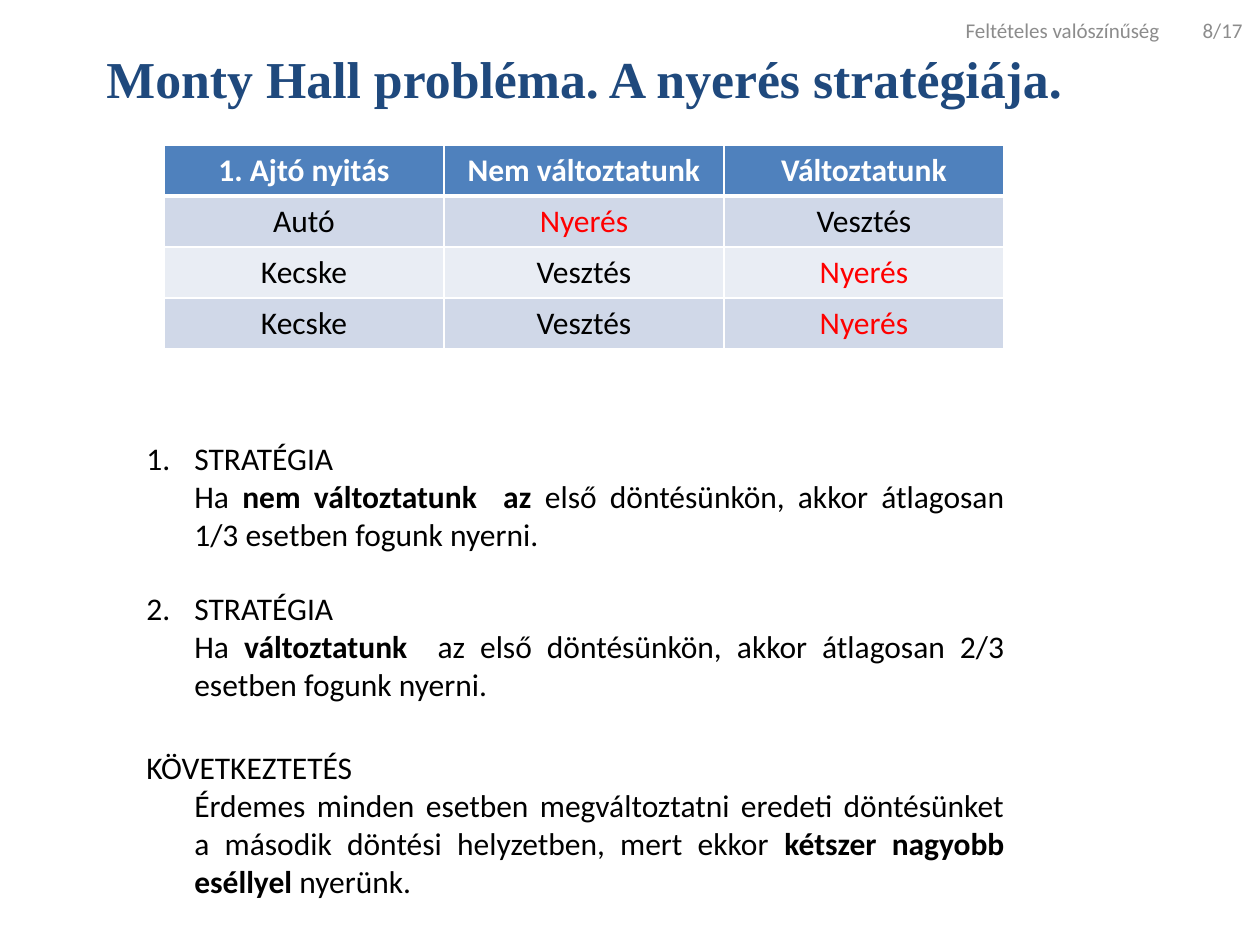
"""Builds the Monty Hall strategy slide with its table of outcomes."""
from dataclasses import dataclass

from lxml.etree import SubElement as Sub
from pptx import Presentation
from pptx.dml.color import RGBColor as Rgb
from pptx.enum.text import MSO_ANCHOR as Anchor, MSO_AUTO_SIZE as Auto, PP_ALIGN as Align
from pptx.oxml.ns import qn
from pptx.util import Emu, Pt

SCALE = 914400 / 126
INDENT = 48
COLORS = {
    "white": "FFFFFF", "black": "000000", "navy": "1F497D", "gray": "8C8C8C",
    "red": "FF0000", "head": "4F81BD", "odd": "D0D8E8", "even": "E9EDF4",
}


@dataclass
class Note:
    """A headed block; every second part of the body is bold."""
    top: int
    high: int
    head: str
    body: tuple[str, ...]
    num: int = 0


ROWS = (
    ("1. Ajtó nyitás", "Nem változtatunk", "Változtatunk"),
    ("Autó", "Nyerés", "Vesztés"),
    ("Kecske", "Vesztés", "Nyerés"),
    ("Kecske", "Vesztés", "Nyerés"),
)
NOTES = (
    Note(433, 127, "STRATÉGIA",
         ("Ha ", "nem változtatunk  az ",
          "első döntésünkön, akkor átlagosan 1/3 esetben fogunk nyerni."), 1),
    Note(583, 127, "STRATÉGIA",
         ("Ha ", "változtatunk",
          "  az első döntésünkön, akkor átlagosan 2/3 esetben fogunk nyerni."), 2),
    Note(742, 165, "KÖVETKEZTETÉS",
         ("Érdemes minden esetben megváltoztatni eredeti döntésünket "
          "a második döntési helyzetben, mert ekkor ",
          "kétszer nagyobb eséllyel", " nyerünk.")),
)


def px(n: int) -> Emu:
    """Turn pixels into EMU."""
    return Emu(round(n * SCALE))


def write(para, text: str, size: float = 18, font: str = "Calibri",
          color: str = "black", bold: bool = False, align=None) -> None:
    """Add one formatted run to a paragraph."""
    run = para.add_run()
    run.text = text
    run.font.size = Pt(size)
    run.font.name = font
    run.font.bold = bold
    run.font.color.rgb = Rgb.from_string(COLORS[color])
    if align is not None:
        para.alignment = align


def add_box(slide, left: int, top: int, wide: int, high: int, anchor=Anchor.TOP):
    """Add a wrapping text box and return its frame."""
    box = slide.shapes.add_textbox(px(left), px(top), px(wide), px(high))
    frame = box.text_frame
    frame.word_wrap = True
    frame.vertical_anchor = anchor
    return frame


def indent(para, left: int, num: int = 0) -> None:
    """Indent a paragraph, with a hanging number if one is given."""
    props = para._p.get_or_add_pPr()
    props.set("marL", str(px(left)))
    props.set("indent", str(-px(left) if num else 0))
    if num:
        Sub(props, qn("a:buFont"), typeface="+mj-lt")
        Sub(props, qn("a:buAutoNum"), type="arabicPeriod", startAt=str(num))


def add_note(slide, note: Note) -> None:
    """Draw a heading with its justified body."""
    frame = add_box(slide, 134, note.top, 883, note.high)
    frame.auto_size = Auto.SHAPE_TO_FIT_TEXT
    head = frame.paragraphs[0]
    indent(head, INDENT if note.num else 0, note.num)
    write(head, note.head)
    body = frame.add_paragraph()
    indent(body, INDENT)
    for i, part in enumerate(note.body):
        write(body, part, bold=i % 2 == 1, align=Align.JUSTIFY)


def edge(cell, **widths: float) -> None:
    """Give a cell white borders, widths in points by side."""
    props = cell._tc.get_or_add_tcPr()
    for side, width in widths.items():
        line = Sub(props, qn(f"a:ln{side}"), w=str(Pt(width)))
        Sub(Sub(line, qn("a:solidFill")), qn("a:srgbClr"), val=COLORS["white"])


def add_grid(slide) -> None:
    """Draw the table of outcomes."""
    high, wide = len(ROWS), len(ROWS[0])
    grid = slide.shapes.add_table(high, wide, px(164), px(145),
                                  px(280 * wide), px(51 * high)).table
    for r, row in enumerate(ROWS):
        fill = "head" if r == 0 else "odd" if r % 2 else "even"
        for c, text in enumerate(row):
            cell = grid.cell(r, c)
            edge(cell, L=1, R=1, T=3 if r == 1 else 1, B=3 if r == 0 else 1)
            cell.fill.solid()
            cell.fill.fore_color.rgb = Rgb.from_string(COLORS[fill])
            color = "white" if r == 0 else "red" if text == "Nyerés" else "black"
            write(cell.text_frame.paragraphs[0], text, color=color,
                  bold=r == 0, align=Align.CENTER)


def main() -> None:
    """Build and save the slide."""
    deck = Presentation()
    deck.slide_width, deck.slide_height = px(1260), px(945)
    slide = deck.slides.add_slide(deck.slide_layouts[6])
    title = add_box(slide, 78, 26, 1077, 93, Anchor.MIDDLE)
    title.margin_top, title.margin_bottom = px(1), px(6)
    line = title.paragraphs[0]
    write(line, " ", size=40.7)
    write(line, "Monty Hall probléma. A nyerés stratégiája.", size=29.6,
          font="Times New Roman", color="navy", bold=True)
    add_grid(slide)
    for note in NOTES:
        add_note(slide, note)
    for text, left, wide in (("Feltételes valószínűség", 902, 270), ("8/17", 1172, 83)):
        frame = add_box(slide, left, 5, wide, 50, Anchor.MIDDLE)
        write(frame.paragraphs[0], text, size=12, color="gray", align=Align.RIGHT)
    deck.save("out.pptx")


if __name__ == "__main__":
    main()
